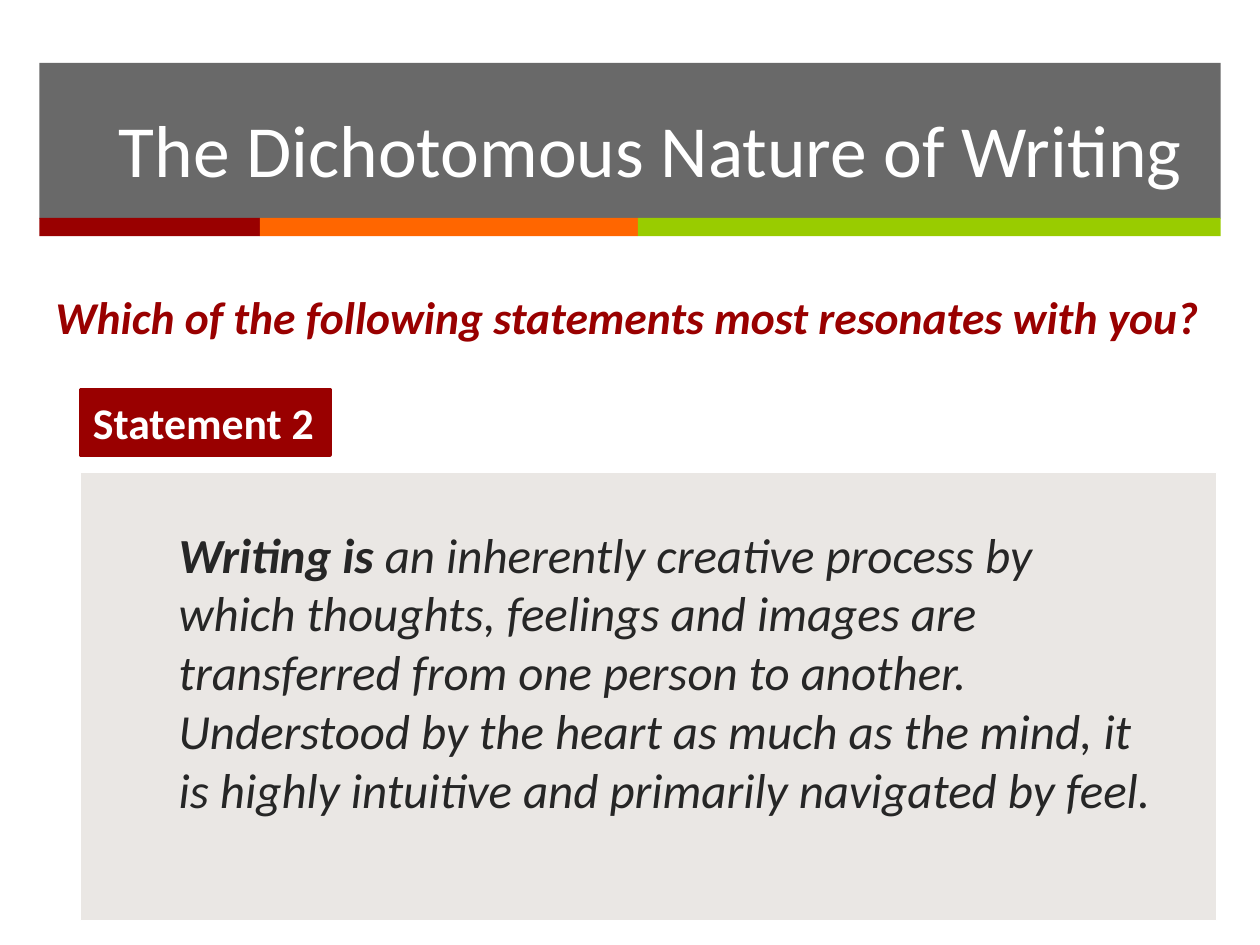
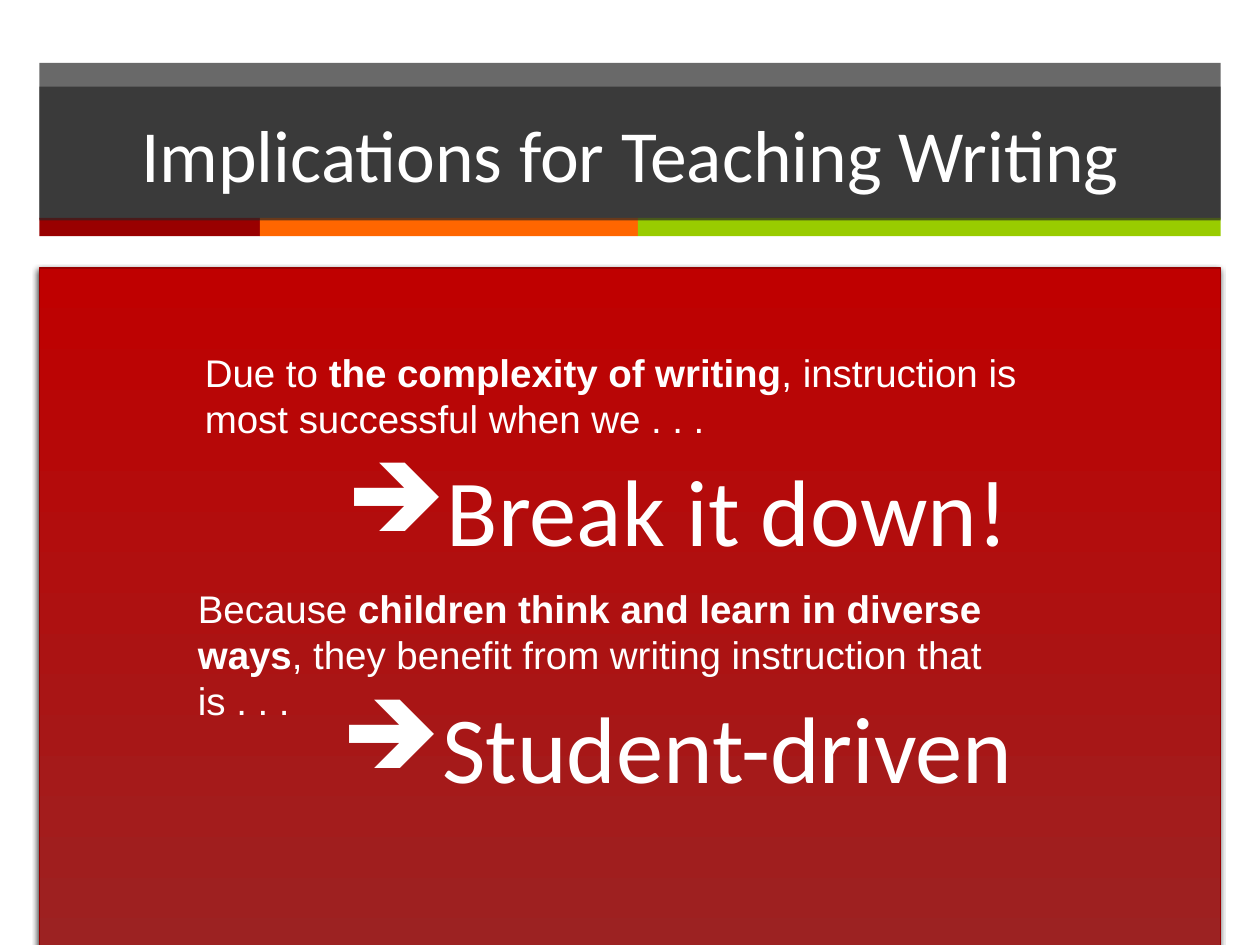
from lxml import etree
from pptx import Presentation
from pptx.dml.color import RGBColor
from pptx.enum.shapes import MSO_SHAPE as SHAPE
from pptx.enum.text import MSO_ANCHOR as ANCHOR, MSO_AUTO_SIZE as AUTO, PP_ALIGN as ALIGN
from pptx.oxml import parse_xml
from pptx.oxml.ns import nsdecls, qn
from pptx.util import Pt

COLORS = {
    "white": "FFFFFF", "ink": "262626", "crimson": "990000", "orange": "FF6600",
    "lime": "99CC00", "sand": "EAE7E4", "edge": "980000",
    "red_top": "BF0000", "red_bottom": "9C2222",
}
BAND_X, BAND_W = 22.5, 675
BAND_ALPHA = 69
STRIPES = [("crimson", 126), ("orange", 216), ("lime", 333)]


def rgb(name):
    return RGBColor.from_string(COLORS[name])


class Deck:
    def __init__(self):
        self.prs = Presentation()
        self.prs.slide_width, self.prs.slide_height = Pt(720), Pt(540)
        self.layout = self.prs.slide_layouts[5]
        self.s = None

    def new_slide(self):
        self.s = self.prs.slides.add_slide(self.layout)

    def rect(self, x, y, w, h, fill, line=None, weight=0.75, alpha=None):
        sp = self.s.shapes.add_shape(SHAPE.RECTANGLE, Pt(x), Pt(y), Pt(w), Pt(h))
        sp.shadow.inherit = False
        self.paint(sp, fill, line, weight, alpha)
        return sp

    def paint(self, sp, fill, line=None, weight=0.75, alpha=None):
        sp.fill.solid()
        sp.fill.fore_color.rgb = rgb(fill)
        if alpha:
            clr = sp.element.spPr.find(qn("a:solidFill"))[0]
            etree.SubElement(clr, qn("a:alpha"), val=str(alpha * 1000))
        self.outline(sp, line, weight)

    def outline(self, sp, line, weight):
        if line:
            sp.line.color.rgb = rgb(line)
            sp.line.width = Pt(weight)
        else:
            sp.line.fill.background()

    def bands(self):
        """Draw the header band and stripes, then hand them to the layout."""
        parts = [self.rect(BAND_X, 36, BAND_W, 89, "ink", alpha=BAND_ALPHA)]
        x = BAND_X
        for color, width in STRIPES:
            parts.append(self.rect(x, 124.5, width, 10.5, color))
            x += width
        for i, sp in enumerate(parts):
            self.layout.shapes.element.insert(2 + i, sp.element)

    def gradient_panel(self, x, y, w, h):
        sp = self.rect(x, y, w, h, "red_top")
        sp.fill.gradient()
        sp.fill.gradient_angle = 90
        for i, (stop, color) in enumerate(zip(sp.fill.gradient_stops, ("red_bottom", "red_top"))):
            stop.color.rgb = rgb(color)
            stop.position = i
        self.outline(sp, "edge", 1)
        effects = sp.element.spPr.find(qn("a:effectLst"))
        effects.append(parse_xml(
            f'<a:outerShdw {nsdecls("a")} blurRad="{Pt(3)}" dist="{Pt(2)}" dir="6600000" '
            'rotWithShape="0"><a:srgbClr val="000000"><a:alpha val="74000"/></a:srgbClr>'
            '</a:outerShdw>'))

    def frame(self, sp, anchor=ANCHOR.TOP, pad=3.6):
        tf = sp.text_frame
        format_values = {
            "word_wrap": True, "auto_size": AUTO.NONE, "vertical_anchor": anchor,
            "margin_left": Pt(7.2), "margin_right": Pt(7.2),
            "margin_top": Pt(pad), "margin_bottom": Pt(pad),
        }
        for name, value in format_values.items():
            setattr(tf, name, value)
        return tf

    def add_runs(self, p, runs, size, color="white", font="Calibri", align=ALIGN.LEFT,
                 italic=False):
        """Fill a paragraph from (text, bold) pairs."""
        p.alignment = align
        for text, bold in runs:
            r = p.add_run()
            r.text = text
            format_values = {"name": font, "size": Pt(size), "bold": bold, "italic": italic}
            for name, value in format_values.items():
                setattr(r.font, name, value)
            r.font.color.rgb = rgb(color)

    def indent(self, p, left, first=0):
        pPr = p._p.get_or_add_pPr()
        pPr.set("marL", str(Pt(left)))
        pPr.set("indent", str(Pt(first)))
        return pPr

    def title(self, x, y, w, h, text, size, fill, line=None, alpha=None, bold=False, **style):
        sp = self.s.shapes.title
        sp.left, sp.top, sp.width, sp.height = Pt(x), Pt(y), Pt(w), Pt(h)
        self.paint(sp, fill, line, alpha=alpha)
        tf = self.frame(sp, ANCHOR.MIDDLE)
        self.add_runs(tf.paragraphs[0], [(text, bold)], size, **style)

    def text(self, x, y, w, h, runs, size, pad=7.2, left=0, **style):
        tf = self.frame(self.s.shapes.add_textbox(Pt(x), Pt(y), Pt(w), Pt(h)), pad=pad)
        self.add_runs(tf.paragraphs[0], runs, size, **style)
        self.indent(tf.paragraphs[0], left)

    def label(self, x, y, w, h, text, size, fill):
        tf = self.frame(self.rect(x, y, w, h, fill, fill, 2))
        self.add_runs(tf.paragraphs[0], [(text, True)], size)

    def arrow_list(self, x, y, w, h, items, size, gap):
        tf = self.frame(self.s.shapes.add_textbox(Pt(x), Pt(y), Pt(w), Pt(h)))
        for i, item in enumerate(items):
            p = tf.add_paragraph() if i else tf.paragraphs[0]
            self.add_runs(p, [(item, False)], size, align=ALIGN.CENTER)
            p.line_spacing = 1.5
            p.space_before = Pt(gap if i else 0)
            pPr = self.indent(p, 36, -45)
            color = etree.SubElement(pPr, qn("a:buClr"))
            etree.SubElement(color, qn("a:srgbClr"), val=COLORS["white"])
            etree.SubElement(pPr, qn("a:buChar"), char="➔")


def statement_slide(deck):
    deck.rect(46, 270, 649, 256, "sand", "white")
    deck.title(24.5, 142.5, 697.5, 76.5, "Which of the following statements most resonates with you?",
               26, "white", "white", bold=True, color="crimson", italic=True)
    deck.text(59, 296, 610, 230, [
        ("Writing is ", True),
        ("an inherently creative process by which thoughts, feelings and images are transferred "
         "from one person to another. Understood by the heart as much as the mind, it is highly "
         "intuitive and primarily navigated by feel.", False),
    ], 28, pad=3.6, left=36, color="ink", italic=True)
    deck.label(46, 222.5, 142.5, 37.5, "Statement 2", 25, "crimson")
    deck.text(29.5, 52, 653, 65.5, [("The Dichotomous Nature of Writing", False)], 42,
              align=ALIGN.RIGHT)


def implications_slide(deck):
    deck.title(BAND_X, 49.5, BAND_W, 76.5, "Implications for Teaching Writing", 42, "ink",
               alpha=BAND_ALPHA, align=ALIGN.CENTER)
    deck.gradient_panel(BAND_X, 153, BAND_W, 395)
    deck.arrow_list(49.5, 222.5, 675, 418, ["Break it down!", "Student-driven"], 54, 38)
    reasons = [
        (110, 192, 512, "Due to ", "the complexity of writing",
         ", instruction is most successful when we . . ."),
        (106, 327, 507.5, "Because ", "children think and learn in diverse ways",
         ", they benefit from writing instruction that is . . ."),
    ]
    for x, y, w, lead, key, rest in reasons:
        deck.text(x, y, w, 67.5, [(lead, False), (key, True), (rest, False)], 22, font="Arial")


def main():
    deck = Deck()
    deck.new_slide()
    deck.bands()
    statement_slide(deck)
    deck.new_slide()
    implications_slide(deck)
    deck.prs.save("out.pptx")


if __name__ == "__main__":
    main()
